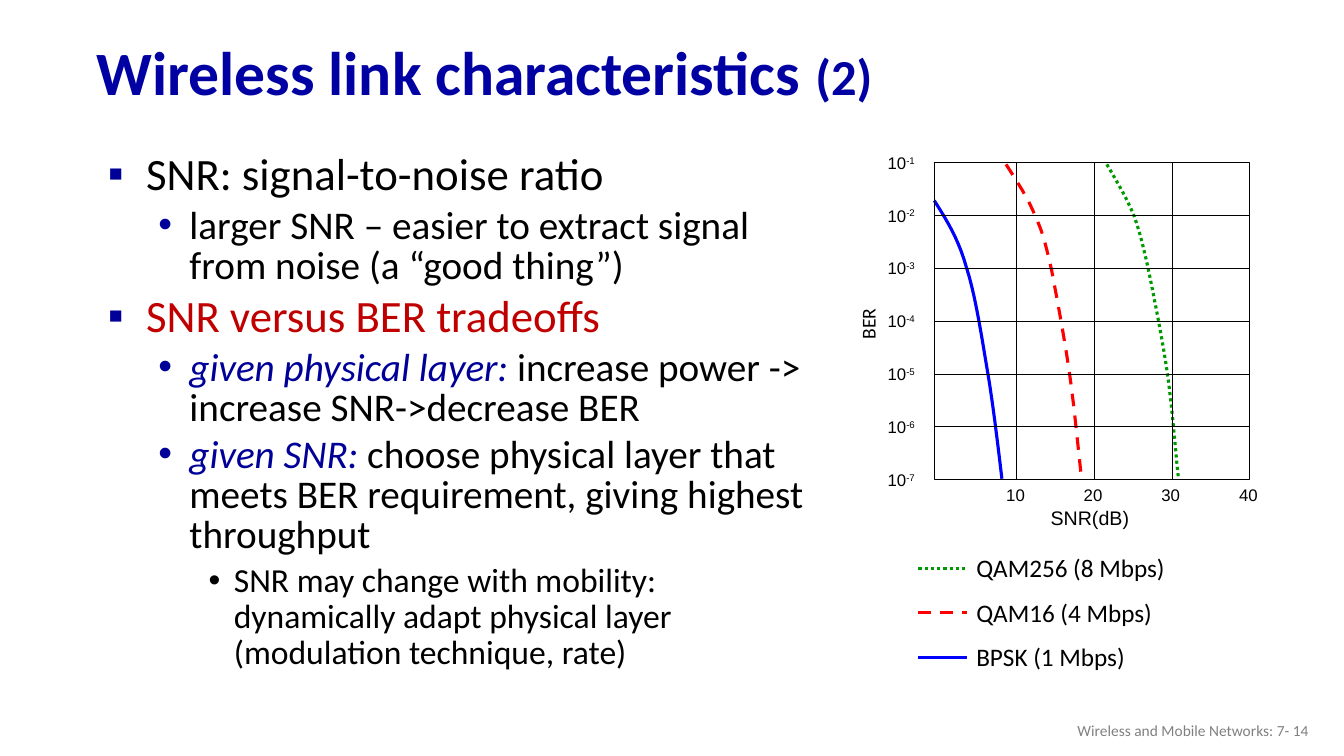
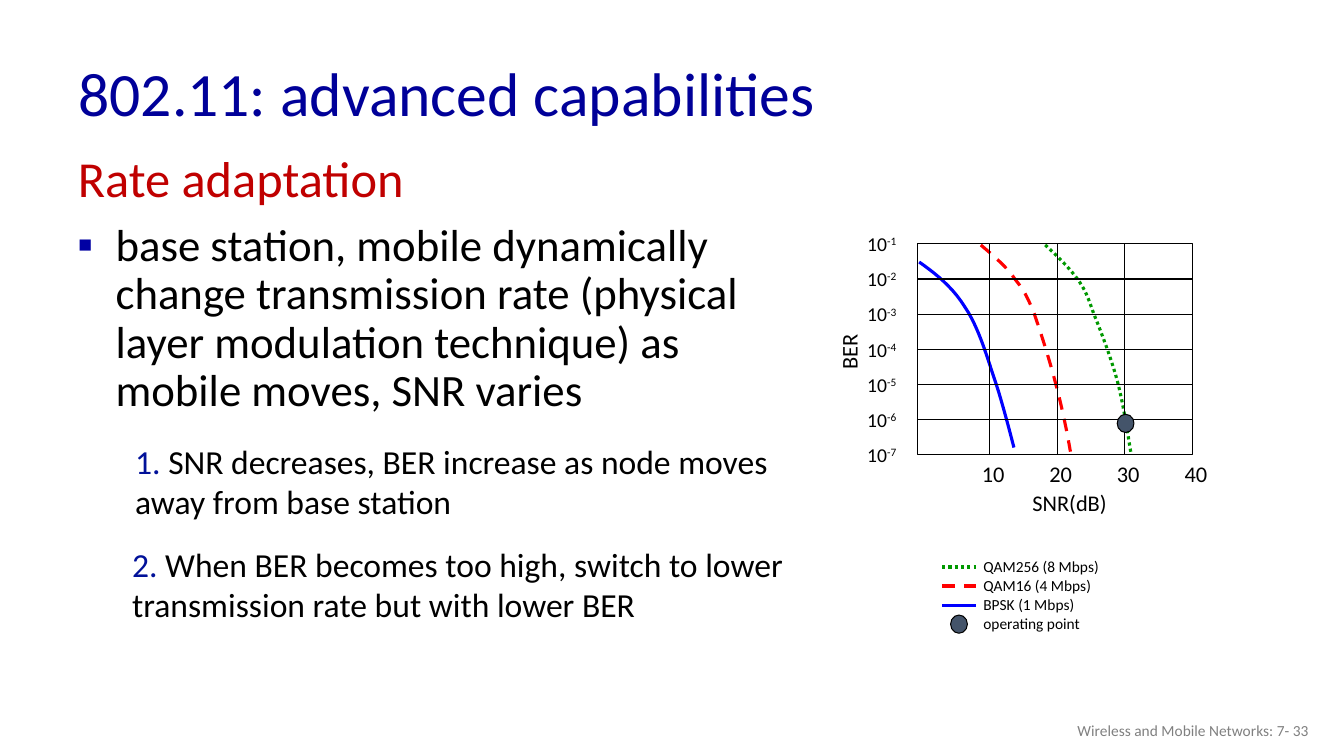
import dataclasses

import lxml.etree
import pptx
import pptx.dml.color
import pptx.enum.dml
import pptx.enum.shapes
import pptx.enum.text
import pptx.oxml.ns
import pptx.util

Pt = pptx.util.Pt
qn = pptx.oxml.ns.qn
rgb = pptx.dml.color.RGBColor.from_string
ALIGN = pptx.enum.text.PP_ALIGN
ANCHOR = pptx.enum.text.MSO_ANCHOR
DASH = pptx.enum.dml.MSO_LINE
SHAPE = pptx.enum.shapes.MSO_SHAPE


@dataclasses.dataclass(frozen=True)
class Theme:
    font: str = "Calibri"
    title_blue: str = "0000A3"
    accent_blue: str = "000099"
    number_blue: str = "011199"
    red: str = "C00000"
    black: str = "000000"
    gray: str = "808080"
    slate: str = "44546A"
    curve_blue: str = "0000FF"
    curve_red: str = "FF0000"
    curve_green: str = "009900"
    title: int = 44
    heading: int = 36
    level1: int = 32
    level2: int = 28
    level3: int = 24
    footer: int = 11
    curve_width: float = 2.25
    grid_width: float = 0.75


T = Theme()
SQUARE = dict(bullet="▪", bullet_color=T.accent_blue, left=27.3, hang=27.3, spacing=0.85, before=6)
DOT = dict(SQUARE, bullet="•", left=58.3, hang=22.3, before=5.4)
SMALL_DOT = dict(DOT, bullet_color=T.black, left=90, hang=18, spacing=0.9, before=4.8)
HEADING = dict(left=28, hang=27, spacing=0.9)
RATE_SQUARE = dict(SQUARE, bullet_color=T.title_blue, left=28, spacing=0.9, before=10)
TITLE = dict(spacing=0.9)


def add_text(s, box, paragraphs, anchor=ANCHOR.TOP, align=ALIGN.LEFT, font=T.font):
    """Add a text box; each paragraph is (style, runs), each run (text, size, colour, *flags)."""
    sp = s.shapes.add_textbox(*[Pt(v) for v in box])
    tf = sp.text_frame
    tf.word_wrap = True
    tf.vertical_anchor = anchor
    for i, (style, runs) in enumerate(paragraphs):
        p = tf.add_paragraph() if i else tf.paragraphs[0]
        p.alignment = align
        pPr = p._p.get_or_add_pPr()
        if "left" in style:
            pPr.set("marL", str(Pt(style["left"])))
            pPr.set("indent", str(-Pt(style["hang"])))
        if "bullet" in style:
            color = lxml.etree.SubElement(pPr, qn("a:buClr"))
            lxml.etree.SubElement(color, qn("a:srgbClr"), val=style["bullet_color"])
            lxml.etree.SubElement(pPr, qn("a:buFont"), typeface="Arial")
            lxml.etree.SubElement(pPr, qn("a:buChar"), char=style["bullet"])
        if "spacing" in style:
            p.line_spacing = style["spacing"]
        if i and "before" in style:
            p.space_before = Pt(style["before"])
        for text, size, color, *flags in runs:
            r = p.add_run()
            r.text = text
            r.font.name, r.font.size = font, Pt(size)
            r.font.color.rgb = rgb(color)
            r.font.bold = "bold" in flags
            r.font.italic = "italic" in flags
            if "super" in flags:
                r._r.get_or_add_rPr().set("baseline", "30000")
    return sp


def style_line(line, color, width, dash=None):
    line.color.rgb = rgb(color)
    line.width = Pt(width)
    if dash:
        line.dash_style = dash


CURVES = [
    ("QAM256 (8 Mbps)", T.curve_green, DASH.ROUND_DOT),
    ("QAM16 (4 Mbps)", T.curve_red, DASH.DASH),
    ("BPSK (1 Mbps)", T.curve_blue, None),
]
STEPS = 10  # straight segments drawn for each cubic piece of a curve

# Each curve is a chain of cubic pieces: start, then two handles and an end per piece.
SLIDES = [
    dict(
        number=14,
        title_box=(62, 19, 828, 70),
        title=[("Wireless link characteristics ", T.title, T.title_blue, "bold"),
               ("(2)", T.heading, T.title_blue, "bold")],
        texts=[((70, 106.5, 512, 409), [
            (SQUARE, [("SNR: signal-to-noise ratio", T.level1, T.black)]),
            (DOT, [("larger SNR – easier to extract signal from noise (a “good thing”)",
                    T.level2, T.black)]),
            (SQUARE, [("SNR versus BER tradeoffs", T.level1, T.red)]),
            (DOT, [("given physical layer:", T.level2, T.accent_blue, "italic"),
                   (" increase power -> increase SNR->decrease BER", T.level2, T.black)]),
            (DOT, [("given SNR:", T.level2, T.accent_blue, "italic"),
                   (" choose physical layer that meets BER requirement, giving highest throughput",
                    T.level2, T.black)]),
            (SMALL_DOT, [("SNR may change with mobility: dynamically adapt physical layer "
                          "(modulation technique, rate)", T.level3, T.black)]),
        ])],
        plot=(667.4, 116, 225.4, 226.8), first_column=59, column=55.4,
        axis_font="Arial", tick=12, tick_shift=-1, tick_drop=10.5,
        snr=14, snr_center=(778.5, 369.6), ber=14, ber_gap=47.5, exponent=12, exponent_gap=14,
        legend=dict(x=656, width=34.5, text=697.5, y=406, pitch=31.7, size=18),
        curves=[
            [(790.6, 117.4), (797.8, 129.6), (805, 141.8), (810, 154.1), (814.3, 166.3),
             (815.8, 172.8), (820.1, 191.5), (823.7, 209.5), (830.2, 241.2), (833.8, 266.4),
             (837.4, 291.6), (840.2, 328.3), (841.7, 341.3)],
            [(718.6, 117.4), (726.5, 129.6), (734.4, 141.8), (739.4, 154.1), (745.2, 167),
             (746.6, 173.5), (751, 192.2), (754.6, 211), (760.3, 241.2), (763.9, 266.4),
             (767.5, 291.6), (769.7, 316.8), (772.6, 342)],
            [(667.4, 143.3), (676.1, 157), (684.7, 170.6), (690.5, 191.5), (697, 211.7),
             (701.3, 241.2), (705.6, 266.4), (709.9, 291.6), (714.2, 329.8), (715.7, 342)],
        ],
    ),
    dict(
        number=33,
        title_box=(49, 34, 828, 70),
        title=[("802.11: advanced capabilities", T.title, T.accent_blue)],
        texts=[
            ((47.5, 106.5, 518, 366), [
                (HEADING, [("Rate adaptation", T.heading, T.red)]),
                (RATE_SQUARE, [("base station, mobile dynamically change transmission rate "
                                "(physical layer modulation technique) as mobile moves, "
                                "SNR varies", T.level1, T.black)]),
            ]),
            ((89.5, 311.5, 518, 65), [
                ({}, [("1. ", T.level3, T.number_blue),
                      ("SNR decreases, BER increase as node moves away from base station",
                       T.level3, T.black)])]),
            ((87.3, 385, 521, 65), [
                ({}, [("2. ", T.level3, T.number_blue),
                      ("When BER becomes too high, switch to lower transmission rate "
                       "but with lower BER", T.level3, T.black)])]),
        ],
        plot=(655.2, 174.2, 196.6, 150.5), first_column=51.8, column=48.2,
        axis_font=T.font, tick=16, tick_shift=2.4, tick_drop=13.2,
        snr=16, snr_center=(764, 359.3), ber=16, ber_gap=49, exponent=14, exponent_gap=15,
        legend=dict(x=673, width=24, text=702.5, y=405, pitch=13.6, size=11),
        curves=[
            [(746.6, 175), (755.3, 182.9), (763.9, 191.5), (769.7, 199.4), (775.4, 207.4),
             (776.9, 211.7), (781.2, 223.9), (786.2, 236.2), (794.2, 257), (798.5, 273.6),
             (802.8, 290.2), (806.4, 315.4), (807.8, 323.3)],
            [(700.6, 175), (709.9, 182.9), (719.3, 190.8), (725, 199.4), (731.5, 207.4),
             (733.7, 211.7), (738.7, 223.9), (743, 236.2), (749.5, 256.3), (753.8, 272.9),
             (758.2, 289.4), (761.8, 306), (764.6, 322.6)],
            [(656.6, 187.2), (668.9, 195.8), (680.4, 205.2), (689, 218.9), (698.4, 232.6),
             (704.2, 252), (709.9, 269.3), (715.7, 285.8), (722.2, 311.8), (724.3, 319.7)],
        ],
        operating=(804, 302.4),
    ),
]

prs = pptx.Presentation()
prs.slide_width, prs.slide_height = Pt(960), Pt(540)

for slide in SLIDES:
    s = prs.slides.add_slide(prs.slide_layouts[6])
    add_text(s, slide["title_box"], [(TITLE, slide["title"])], ANCHOR.MIDDLE)
    add_text(s, (726, 507.5, 216, 29),
             [({}, [(f"Wireless and Mobile Networks: 7- {slide['number']}", T.footer, T.gray)])],
             ANCHOR.MIDDLE, ALIGN.RIGHT)
    for box, paragraphs in slide["texts"]:
        add_text(s, box, paragraphs)

    # Curves
    for (_, color, dash), nodes in zip(CURVES, slide["curves"]):
        points = [nodes[0]]
        for start in range(0, len(nodes) - 1, 3):
            piece = nodes[start:start + 4]
            for step in range(1, STEPS + 1):
                t = step / STEPS
                weights = ((1 - t) ** 3, 3 * t * (1 - t) ** 2, 3 * t * t * (1 - t), t ** 3)
                points.append([sum(k * node[axis] for k, node in zip(weights, piece))
                               for axis in (0, 1)])
        points = [(Pt(px), Pt(py)) for px, py in points]
        builder = s.shapes.build_freeform(*points[0])
        builder.add_line_segments(points[1:], close=False)
        sp = builder.convert_to_shape()
        sp.shadow.inherit = False
        sp.fill.background()
        style_line(sp.line, color, T.curve_width, dash)

    # Plot frame, gridlines and legend keys
    x, y, w, h = slide["plot"]
    row_height = h / 6
    columns = [x + slide["first_column"] + i * slide["column"] for i in range(3)]
    sp = s.shapes.add_shape(SHAPE.RECTANGLE, Pt(x), Pt(y), Pt(w), Pt(h))
    sp.shadow.inherit = False
    sp.fill.background()
    style_line(sp.line, T.black, T.grid_width)

    key = slide["legend"]
    legend_rows = [key["y"] + i * key["pitch"] for i in range(4)]
    grid = (T.black, T.grid_width)
    lines = [((x, y + i * row_height, x + w, y + i * row_height), grid) for i in range(1, 6)]
    lines += [((column, y, column, y + h), grid) for column in columns]
    lines += [((key["x"], row, key["x"] + key["width"], row), (color, T.curve_width, dash))
              for row, (_, color, dash) in zip(legend_rows, CURVES)]
    for ends, look in lines:
        sp = s.shapes.add_connector(pptx.enum.shapes.MSO_CONNECTOR.STRAIGHT,
                                    *[Pt(v) for v in ends])
        style_line(sp.line, *look)
        lxml.etree.SubElement(sp._element.spPr, qn("a:effectLst"))

    # Axis labels
    for i in range(7):
        add_text(s, (x - slide["exponent_gap"] - 42.8, y + i * row_height - 12, 50, 24),
                 [({}, [("10", slide["exponent"], T.black),
                        (f"-{i + 1}", slide["exponent"], T.black, "super")])],
                 ANCHOR.MIDDLE, ALIGN.RIGHT, slide["axis_font"])
    for value, column in zip((10, 20, 30, 40), columns + [x + w]):
        add_text(s, (column + slide["tick_shift"] - 20, y + h + slide["tick_drop"] - 13, 40, 26),
                 [({}, [(str(value), slide["tick"], T.black)])],
                 ANCHOR.MIDDLE, ALIGN.CENTER, slide["axis_font"])
    center_x, center_y = slide["snr_center"]
    add_text(s, (center_x - 45, center_y - 13, 90, 26),
             [({}, [("SNR(dB)", slide["snr"], T.black)])],
             ANCHOR.MIDDLE, ALIGN.CENTER, slide["axis_font"])
    sp = add_text(s, (x - slide["ber_gap"] - 30, y + h / 2 - 11, 60, 26),
                  [({}, [("BER", slide["ber"], T.black)])], ANCHOR.MIDDLE, ALIGN.CENTER)
    sp.rotation = 270

    # Legend names and operating point
    names = [name for name, _, _ in CURVES]
    if "operating" in slide:
        names.append("operating point")
        for cx, cy in (slide["operating"], (key["x"] + key["width"] / 2, legend_rows[3])):
            sp = s.shapes.add_shape(SHAPE.OVAL, Pt(cx - 6), Pt(cy - 6.5), Pt(12), Pt(13))
            sp.shadow.inherit = False
            sp.fill.solid()
            sp.fill.fore_color.rgb = rgb(T.slate)
            style_line(sp.line, T.black, T.grid_width)
    for name, row in zip(names, legend_rows):
        add_text(s, (key["text"] - 7.2, row - 14.5, 160, 28),
                 [({}, [(name, key["size"], T.black)])], ANCHOR.MIDDLE)

prs.save("out.pptx")
